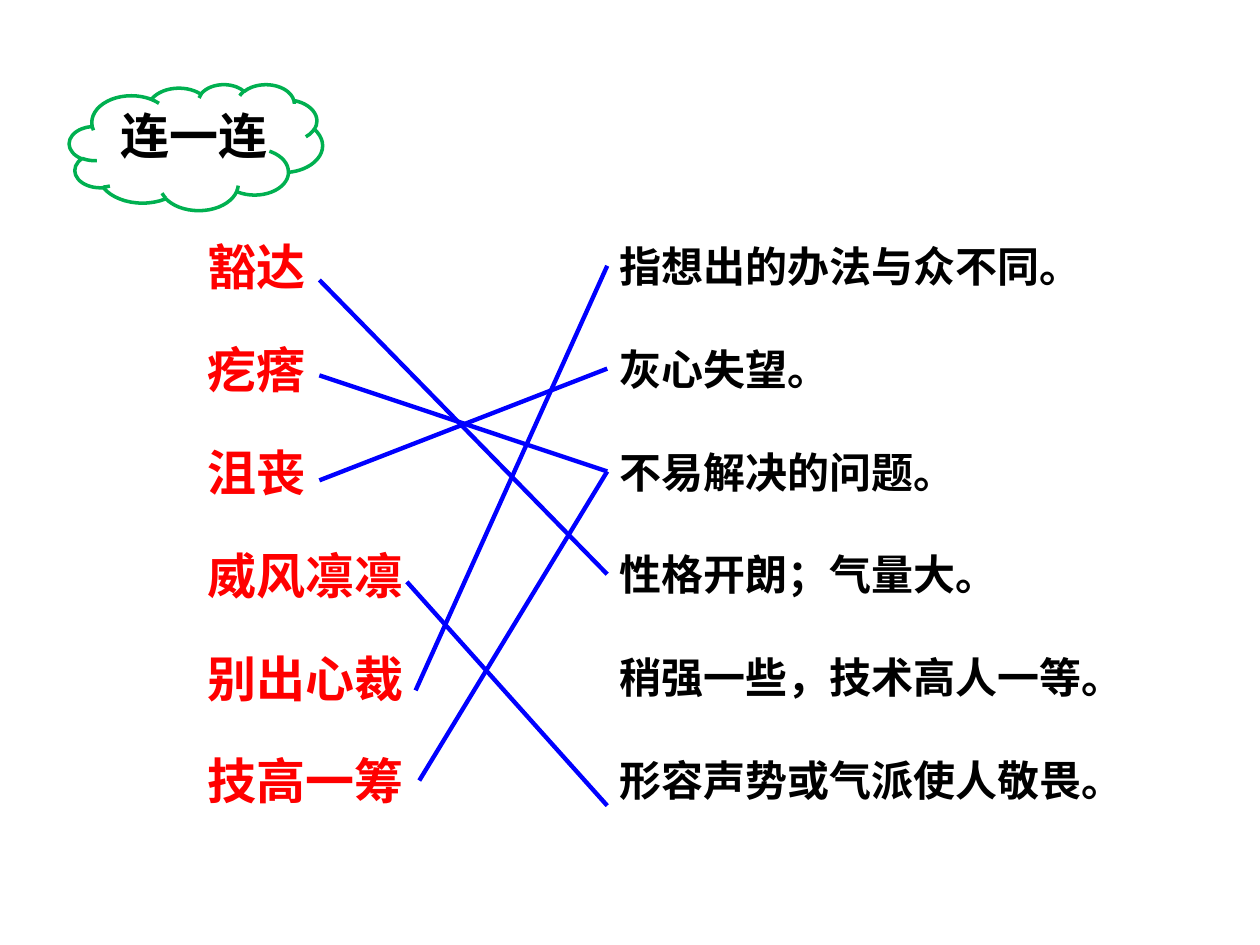
from pptx import Presentation
from pptx.dml.color import RGBColor
from pptx.enum.shapes import MSO_CONNECTOR as Connector, MSO_SHAPE as Shape
from pptx.enum.text import PP_ALIGN as Align
from pptx.oxml.ns import qn
from pptx.util import Pt
from lxml.etree import SubElement

RED = RGBColor(0xFF, 0x00, 0x00)
BLACK = RGBColor(0x00, 0x00, 0x00)
BLUE = RGBColor(0x00, 0x00, 0xFF)
GREEN = RGBColor(0x00, 0xB0, 0x50)
WHITE = RGBColor(0xFF, 0xFF, 0xFF)
FONT = "Noto Sans CJK SC"
WORD_FORMAT = {"size": Pt(28), "bold": True, "name": FONT}
MEANING_FORMAT = {"size": Pt(24), "bold": True, "name": FONT}

deck = Presentation()
deck.slide_width, deck.slide_height = Pt(720), Pt(540)
page = deck.slides.add_slide(deck.slide_layouts[6])


def add_text(text, left, top, width, height, font_format, color, wrap=True):
    box = page.shapes.add_textbox(Pt(left), Pt(top), Pt(width), Pt(height))
    box.text_frame.word_wrap = wrap
    para = box.text_frame.paragraphs[0]
    span = para.add_run()
    span.text = text
    for key, value in font_format.items():
        setattr(span.font, key, value)
    span.font.color.rgb = color
    # Chinese text takes the East Asian typeface
    SubElement(span.font._element, qn("a:ea")).set("typeface", FONT)
    return box


# Words on the left, meanings on the right, on a common row pitch
ROW_PITCH = 58.75
WORD_LEFT, WORD_TOP, WORD_HEIGHT = 111.6, 131.8, 41
MEANING_LEFT, MEANING_TOP = 347, 133.9

words = ["豁达", "疙瘩", "沮丧", "威风凛凛", "别出心裁", "技高一筹"]
word_boxes = [
    add_text(word, WORD_LEFT, WORD_TOP + row * ROW_PITCH,
             14.8 + 28.3 * len(word), WORD_HEIGHT, WORD_FORMAT, RED, wrap=False)
    for row, word in enumerate(words)
]

meanings = [  # text, width, height
    ("指想出的办法与众不同。", 280, 36),
    ("灰心失望。", 150, 36),
    ("不易解决的问题。", 260, 36),
    ("性格开朗；气量大。", 234, 36),
    ("稍强一些，技术高人一等。", 303, 36),
    ("形容声势或气派使人敬畏。", 303, 65.5),
]
meaning_boxes = [
    add_text(text, MEANING_LEFT, MEANING_TOP + row * ROW_PITCH,
             width, height, MEANING_FORMAT, BLACK)
    for row, (text, width, height) in enumerate(meanings)
]

# Matching lines: start x, start y, word row, meaning row
matches = [
    (182.5, 160, 0, 3),
    (182.5, 274.5, 2, 1),
    (232.5, 332.5, 3, 5),
    (237.5, 394.5, 4, 0),
    (182.5, 214.5, 1, 2),
    (239.8, 446, 5, 2),
]
for start_x, start_y, word_row, meaning_row in matches:
    line = page.shapes.add_connector(
        Connector.STRAIGHT, Pt(start_x), Pt(start_y), Pt(MEANING_LEFT), Pt(start_y))
    line.end_connect(meaning_boxes[meaning_row], 1)
    if word_row == 5:  # the only line that starts at the middle of its word's side
        line.begin_connect(word_boxes[word_row], 3)
    line.line.color.rgb = BLUE
    line.line.width = Pt(2.5)
    SubElement(line._element.spPr, qn("a:effectLst"))

# Title cloud, half transparent
cloud = page.shapes.add_shape(Shape.CLOUD, Pt(39.6), Pt(48.2), Pt(144.7), Pt(72))
cloud.shadow.inherit = False
cloud.fill.solid()
cloud.fill.fore_color.rgb = WHITE
fill_color = cloud._element.spPr.find(qn("a:solidFill")).find(qn("a:srgbClr"))
SubElement(fill_color, qn("a:alpha")).set("val", "50000")
cloud.line.color.rgb = GREEN
cloud.line.width = Pt(2)

title = add_text("连一连", 49, 56.9, 123.8, 41, WORD_FORMAT, BLACK)
title.text_frame.paragraphs[0].alignment = Align.CENTER

deck.save("out.pptx")
